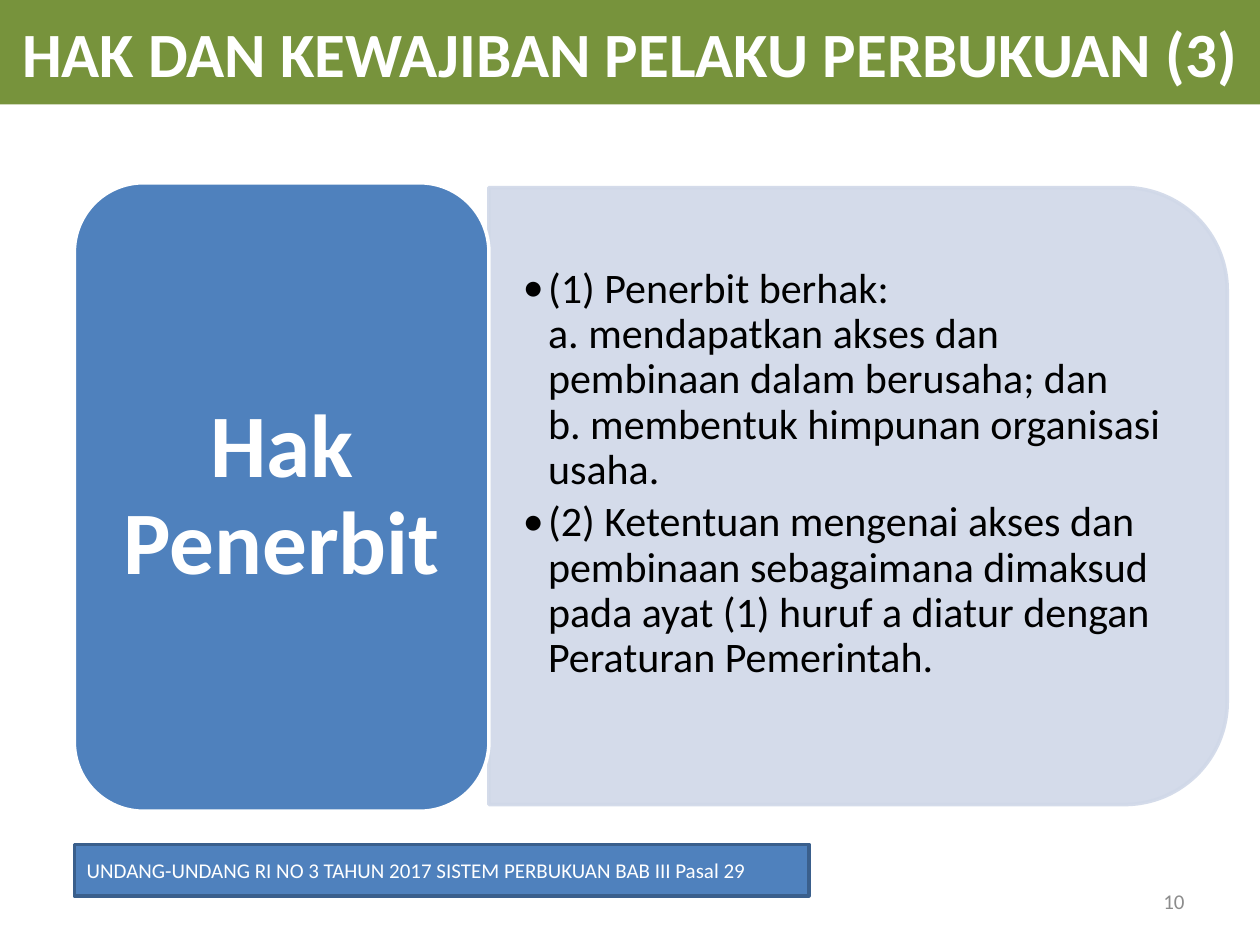
from lxml import etree
from pptx import Presentation
from pptx.dml.color import RGBColor
from pptx.enum.shapes import MSO_SHAPE
from pptx.enum.text import MSO_ANCHOR, MSO_AUTO_SIZE, PP_ALIGN
from pptx.oxml.ns import qn
from pptx.util import Inches, Pt

LEFT, CENTER, RIGHT = PP_ALIGN.LEFT, PP_ALIGN.CENTER, PP_ALIGN.RIGHT
MIDDLE = MSO_ANCHOR.MIDDLE
NO_AUTOFIT = MSO_AUTO_SIZE.NONE
RECTANGLE = MSO_SHAPE.RECTANGLE
ROUNDED = MSO_SHAPE.ROUNDED_RECTANGLE
ROUNDED_SIDE = MSO_SHAPE.ROUND_2_SAME_RECTANGLE
WHITE = RGBColor(0xFF, 0xFF, 0xFF)
BLACK = RGBColor(0x00, 0x00, 0x00)
GREEN = RGBColor(0x77, 0x93, 0x3C)
BLUE = RGBColor(0x4F, 0x81, 0xBD)
DARK_BLUE = RGBColor(0x3A, 0x5F, 0x8C)
PALE_BLUE = RGBColor(0xD0, 0xD8, 0xE8)
GRAY = RGBColor(0x8C, 0x8C, 0x8C)

prs = Presentation()
prs.slide_width, prs.slide_height = Inches(10), Inches(7.5)
slide = prs.slides.add_slide(prs.slide_layouts[5])
shapes = slide.shapes


def area(left, top, width, height):
    """Turn percentages of the slide into a box."""
    return [int(share * side / 100) for share, side in
            zip((left, top, width, height),
                (prs.slide_width, prs.slide_height) * 2)]


def write(shape, paragraphs, size, color, align=LEFT, bold=False, spacing=1.0):
    frame = shape.text_frame
    frame.auto_size = NO_AUTOFIT
    frame.word_wrap = True
    frame.vertical_anchor = MIDDLE
    frame.text = "\n".join(paragraphs)
    for paragraph in frame.paragraphs:
        paragraph.alignment = align
        paragraph.line_spacing = spacing
        for run in paragraph.runs:
            font = run.font
            font.name, font.size, font.bold = "Calibri", Pt(size), bold
            font.color.rgb = color


# Title band
title = shapes.title
title.left, title.top, title.width, title.height = area(0, 0, 100, 11.05)
title.fill.solid()
title.fill.fore_color.rgb = GREEN
write(title, ["HAK DAN KEWAJIBAN PELAKU PERBUKUAN (3)"], 36, WHITE, CENTER, True)

# Rights panel: a shape with two round corners, turned to face right
left, top, width, height = area(38.8, 19.85, 58.6, 65.3)
turn = (width - height) // 2
panel = shapes.add_shape(ROUNDED_SIDE, left + turn, top - turn, height, width)
panel.rotation = 90
topic = shapes.add_shape(ROUNDED, *area(5.9, 19.35, 32.9, 66.5))
source = shapes.add_shape(RECTANGLE, *area(5.9, 89.35, 58.3, 5.45))

for shape, fill, line in ((panel, PALE_BLUE, PALE_BLUE),
                          (topic, BLUE, WHITE),
                          (source, BLUE, DARK_BLUE)):
    shape.shadow.inherit = False
    shape.fill.solid()
    shape.fill.fore_color.rgb = fill
    shape.line.color.rgb = line
    shape.line.width = Pt(2)

for color in panel._element.spPr.iter(qn("a:srgbClr")):
    etree.SubElement(color, qn("a:alpha"), val="90000")

topic.text_frame.margin_left = topic.text_frame.margin_right = Inches(0.15)
write(topic, ["Hak Penerbit"], 51, WHITE, CENTER, True, 0.9)
write(source, ["UNDANG-UNDANG RI NO 3 TAHUN 2017 SISTEM PERBUKUAN BAB III Pasal 29"],
      12, WHITE)

rights = shapes.add_textbox(*area(38.8, 23.1, 56.2, 59))
write(rights, [
    "(1) Penerbit berhak:\va. mendapatkan akses dan pembinaan dalam berusaha; dan"
    "\vb. membentuk himpunan organisasi usaha.",
    "(2) Ketentuan mengenai akses dan pembinaan sebagaimana dimaksud pada ayat (1) "
    "huruf a diatur dengan Peraturan Pemerintah.",
], 24, BLACK, spacing=0.9)
margins = {"margin_left": 0.27, "margin_right": 0.27,
           "margin_top": 0.14, "margin_bottom": 0.5}
for side, inches in margins.items():
    setattr(rights.text_frame, side, Inches(inches))
for paragraph in rights.text_frame.paragraphs:
    paragraph.space_after = Pt(4)
    properties = paragraph._p.get_or_add_pPr()
    properties.set("marL", str(Inches(0.2)))
    properties.set("indent", str(-Inches(0.2)))
    etree.SubElement(properties, qn("a:buFont"), typeface="Calibri")
    etree.SubElement(properties, qn("a:buChar"), char="•")

page_number = shapes.add_textbox(*area(71.7, 92.7, 23.3, 5.3))
write(page_number, ["10"], 12, GRAY, RIGHT)

prs.save("out.pptx")
